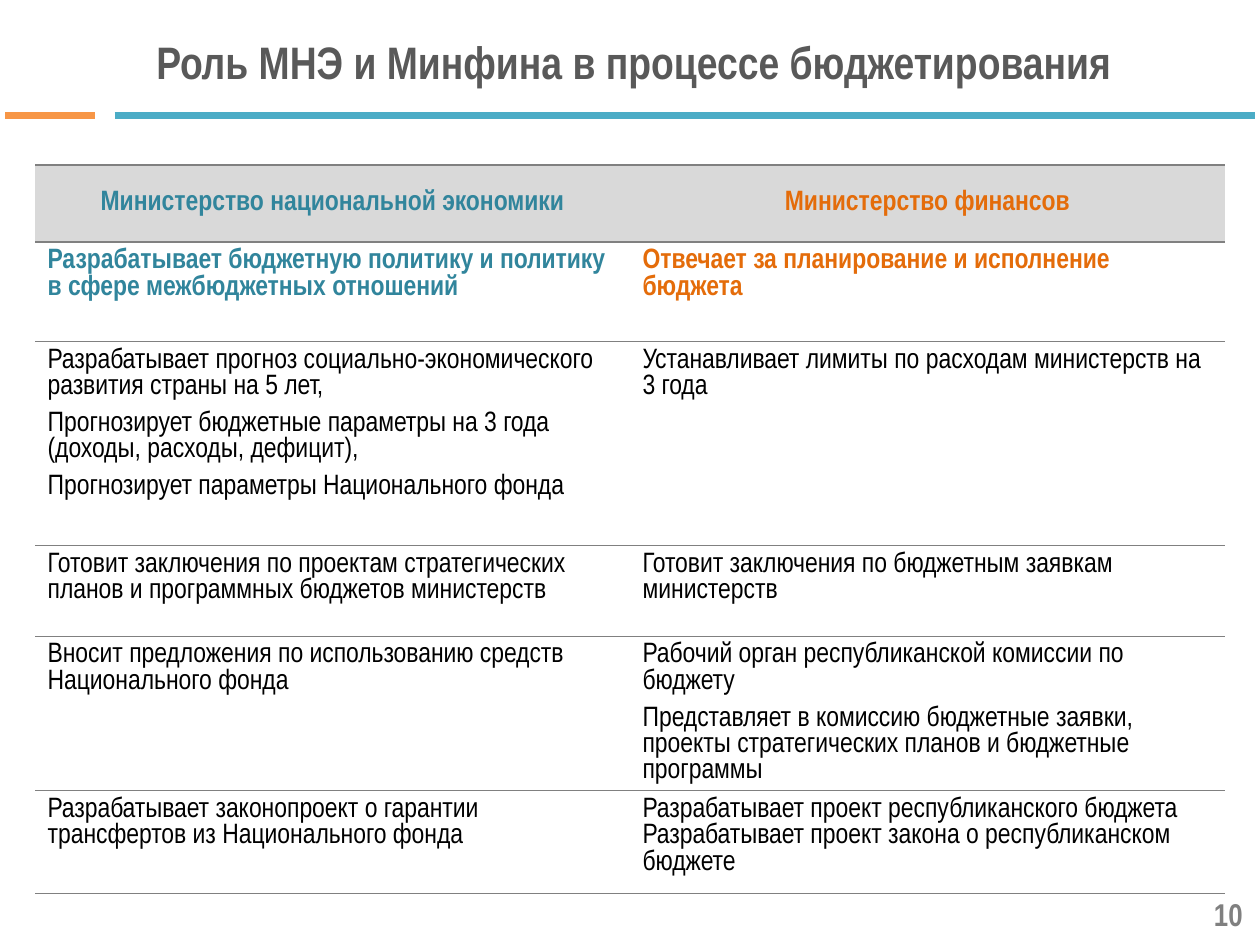
from dataclasses import dataclass

from lxml.etree import SubElement as Sub
from pptx import Presentation
from pptx.dml.color import RGBColor as RGB
from pptx.enum.shapes import MSO_CONNECTOR as Conn
from pptx.enum.text import MSO_ANCHOR as Anchor, MSO_AUTO_SIZE as Auto, PP_ALIGN as Align
from pptx.oxml.ns import qn
from pptx.util import Pt


@dataclass(frozen=True)
class Theme:
    face: str = "Arial Narrow"
    title: int = 26
    page: int = 18
    cell: int = 16
    dark: str = "595959"
    grey: str = "808080"
    band: str = "D9D9D9"
    black: str = "000000"
    teal: str = "31859C"
    rust: str = "E46C0A"
    blue: str = "4BACC6"
    gold: str = "F79646"
    plain: str = "{2D5ABB26-0587-4C30-8999-92F81FD0307C}"


HEAD = ["Министерство национальной экономики", "Министерство финансов"]
ROLES = [
    ["Разрабатывает бюджетную политику и политику в сфере межбюджетных отношений",
     "Отвечает за планирование и исполнение бюджета"],
    [["Разрабатывает прогноз социально-экономического развития страны на 5 лет,",
      "Прогнозирует бюджетные параметры на 3 года (доходы, расходы, дефицит),",
      "Прогнозирует параметры Национального фонда"],
     "Устанавливает лимиты по расходам министерств на 3 года"],
    ["Готовит заключения по проектам стратегических планов и программных бюджетов министерств",
     "Готовит заключения по бюджетным заявкам министерств"],
    ["Вносит предложения по использованию средств Национального фонда",
     ["Рабочий орган республиканской комиссии по бюджету",
      "Представляет в комиссию бюджетные заявки, проекты стратегических планов "
      "и бюджетные программы"]],
    ["Разрабатывает законопроект о гарантии трансфертов из Национального фонда",
     "Разрабатывает проект республиканского бюджета "
     "Разрабатывает проект закона о республиканском бюджете"],
]
HIGHS = [44, 56.9, 116.6, 51.8, 88, 58.5]


class Deck:
    def __init__(self, theme):
        self.theme = theme
        self.file = Presentation()
        self.file.slide_width, self.file.slide_height = Pt(720), Pt(540)
        self.slide = self.file.slides.add_slide(self.file.slide_layouts[5])

    def text(self, frame, text, size, tint, bold=True, align=Align.LEFT, after=0):
        parts = [text] if isinstance(text, str) else text
        for i, part in enumerate(parts):
            para = frame.paragraphs[0] if i == 0 else frame.add_paragraph()
            para.text = part
            para.alignment = align
            para.space_before, para.space_after = Pt(0), Pt(after)
            font = para.runs[0].font
            for key, val in {"name": self.theme.face, "size": Pt(size), "bold": bold}.items():
                setattr(font, key, val)
            font.color.rgb = RGB.from_string(tint)

    def frame(self, shape):
        form = {"word_wrap": True, "auto_size": Auto.NONE, "vertical_anchor": Anchor.MIDDLE}
        for key, val in form.items():
            setattr(shape.text_frame, key, val)
        return shape.text_frame

    def title(self, text, box):
        shape = self.slide.shapes.title
        for key, val in zip(("left", "top", "width", "height"), box):
            setattr(shape, key, Pt(val))
        self.text(self.frame(shape), text, self.theme.title, self.theme.dark,
                  align=Align.CENTER, after=6)

    def label(self, text, box):
        shape = self.slide.shapes.add_textbox(*map(Pt, box))
        self.text(self.frame(shape), text, self.theme.page, self.theme.grey, align=Align.RIGHT)

    def rule(self, left, right, y, tint):
        line = self.slide.shapes.add_connector(Conn.STRAIGHT, *map(Pt, (left, y, right, y)))
        line.line.width = Pt(4.5)
        line.line.color.rgb = RGB.from_string(tint)
        Sub(line._element.spPr, qn("a:effectLst"))

    def edge(self, cell, side, width):
        line = Sub(cell._tc.get_or_add_tcPr(), qn("a:" + side), w=str(Pt(width)))
        fill = Sub(line, qn("a:solidFill"))
        Sub(fill, qn("a:srgbClr"), val=self.theme.grey)

    def table(self, rows, highs, left, top, width):
        wide = len(rows[0])
        box = map(Pt, (left, top, width, sum(highs)))
        grid = self.slide.shapes.add_table(len(rows), wide, *box).table
        grid.horz_banding = grid.first_row = False
        grid._tbl.tblPr.find(qn("a:tableStyleId")).text = self.theme.plain
        for col in grid.columns:
            col.width = Pt(width / wide)
        for r, (row, high) in enumerate(zip(rows, highs)):
            grid.rows[r].height = Pt(high)
            for c, text in enumerate(row):
                self.cell(grid.cell(r, c), text, r, c)

    def cell(self, cell, text, r, c):
        head = r == 0
        tint = (self.theme.teal, self.theme.rust)[c] if r < 2 else self.theme.black
        self.edge(cell, "lnT", 1.5 if r < 2 else 0.75)
        self.edge(cell, "lnB", 1.5 if head else 0.75)
        if head:
            cell.fill.solid()
            cell.fill.fore_color.rgb = RGB.from_string(self.theme.band)
        else:
            cell.fill.background()
        cell.vertical_anchor = Anchor.MIDDLE if head else Anchor.TOP
        self.text(cell.text_frame, text, self.theme.cell, tint, r < 2,
                  Align.CENTER if head else Align.LEFT, 0 if isinstance(text, str) else 6)


def main():
    theme = Theme()
    deck = Deck(theme)
    deck.title("Роль МНЭ и Минфина в процессе бюджетирования", (25.2, 10, 674.6, 50))
    deck.label("10", (549.4, 507.6, 167.8, 28.8))
    deck.rule(65.5, 717, 66, theme.blue)
    deck.rule(3, 54, 66, theme.gold)
    deck.table([HEAD] + ROLES, HIGHS, 20, 94.3, 680)
    deck.file.save("out.pptx")


if __name__ == "__main__":
    main()
